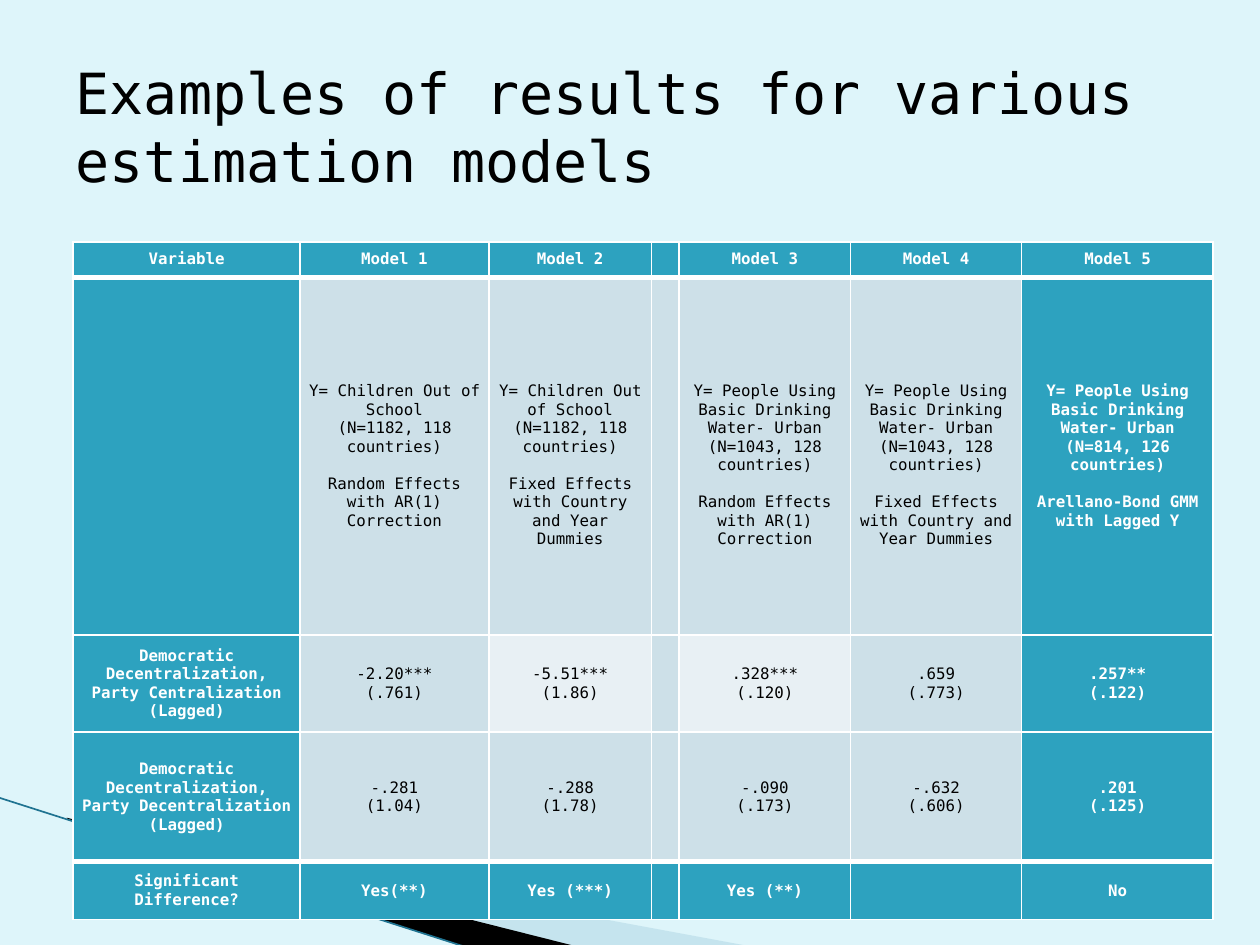
from dataclasses import dataclass
from typing import Optional

from lxml import etree
from pptx import Presentation
from pptx import util as u
from pptx.dml.color import RGBColor
from pptx.enum import shapes, text
from pptx.oxml import ns

WIDE, HIGH = u.Inches(10), u.Inches(7.5)


@dataclass(frozen=True)
class Theme:
    """Colours and type sizes of the slide."""
    back: str = "DEF5FA"
    teal: str = "2DA2BF"
    pale: str = "CDE0E8"
    light: str = "E8F0F4"
    mist: str = "A0CBDC"
    edge: str = "1F7391"
    ink: str = "000000"
    white: str = "FFFFFF"
    font: str = "DejaVu Sans Mono"
    head: float = 32.4
    body: float = 9
    gap: float = 10.5
    thin: float = 1
    thick: float = 3


@dataclass(frozen=True)
class Box:
    """A frame in percent of the slide's size."""
    left: float
    top: float
    width: float
    height: float

    def place(self) -> tuple:
        """Return the frame as lengths."""
        return (*spot(self.left, self.top), *spot(self.width, self.height))


@dataclass(frozen=True)
class Wedge:
    """A filled outline with corners in percent of the slide's size."""
    dots: tuple
    color: str
    alpha: Optional[int] = None


T = Theme()
TITLE = Box(5, 4, 90, 16.67)
GRID = Box(5.8, 25.6, 90.5, 71.73)
COLS = (180, 150, 129, 22, 136, 136, 152)
ROWS = (28, 284, 77, 103, 46)
WEDGES = (
    Wedge(((5.5, 86.8), (59.5, 100.13), (45.6, 100.13), (5.5, 86.67)), T.mist, 40),
    Wedge(((5.3, 86.53), (45.7, 100.13), (37.2, 100.27), (5.4, 86.67)), T.ink),
)
RULE = ((-0.1, 84.4), (37.1, 100.27))

SCHOOL = "Y= Children Out of School\n(N=1182, 118 countries)\n\n"
WATER = "Y= People Using Basic Drinking Water- Urban (N={} countries)\n\n"
RANDOM = "Random Effects with AR(1) Correction"
FIXED = "Fixed Effects with Country and Year Dummies"
DATA = (
    ("Variable", "Model 1", "Model 2", "", "Model 3", "Model 4", "Model 5"),
    ("", SCHOOL + RANDOM, SCHOOL + FIXED, "", WATER.format("1043, 128") + RANDOM,
     WATER.format("1043, 128") + FIXED,
     WATER.format("814, 126") + "Arellano-Bond GMM with Lagged Y"),
    ("Democratic Decentralization, Party Centralization (Lagged)", "-2.20***\n(.761)",
     "-5.51***\n(1.86)", "", ".328***\n(.120)", ".659\n(.773)", ".257**\n(.122)"),
    ("Democratic Decentralization, Party Decentralization (Lagged)", "-.281\n(1.04)",
     "-.288\n(1.78)", "", "-.090\n(.173)", "-.632\n(.606)", ".201\n(.125)"),
    ("Significant Difference?", "Yes(**)", "Yes (***)", "", "Yes (**)", "", "No"),
)
BRIGHT = {(2, 2), (2, 4)}
LOWER = {(1, 2), (1, 4), (1, 5)}


def spot(x: float, y: float) -> tuple:
    """Turn percent of the slide's size into lengths."""
    return u.Emu(round(WIDE * x / 100)), u.Emu(round(HIGH * y / 100))


def write(frame, copy: str, *, size: float, color: str, bold: bool = False,
          align=text.PP_ALIGN.LEFT, gap: float = 0) -> None:
    """Write lines as paragraphs, with a gap before each new block."""
    first = True
    for block in copy.split("\n\n"):
        for num, line in enumerate(block.split("\n")):
            par = frame.paragraphs[0] if first else frame.add_paragraph()
            par.alignment = align
            par.space_before = u.Pt(0 if first or num else gap)
            first = False
            if not line:
                etree.SubElement(par._p, ns.qn("a:endParaRPr"), sz=str(int(size * 100)))
                continue
            run = par.add_run()
            run.text = line
            font = run.font
            font.name, font.size, font.bold = T.font, u.Pt(size), bold
            font.color.rgb = RGBColor.from_string(color)


def border(cell, side: str, width: float) -> None:
    """Draw one white side of a cell."""
    line = etree.SubElement(cell._tc.get_or_add_tcPr(), ns.qn("a:ln" + side),
                            w=str(u.Pt(width)))
    fill = etree.SubElement(line, ns.qn("a:solidFill"))
    etree.SubElement(fill, ns.qn("a:srgbClr"), val=T.white)


def paint(shape, color: str, alpha: Optional[int] = None) -> None:
    """Fill a shape or cell with a colour."""
    shape.fill.solid()
    shape.fill.fore_color.rgb = RGBColor.from_string(color)
    if alpha is not None:
        tint = shape._element.spPr.find(".//" + ns.qn("a:srgbClr"))
        etree.SubElement(tint, ns.qn("a:alpha"), val=str(alpha * 1000))


def wedge(slide, item: Wedge) -> None:
    """Draw one corner wedge."""
    dots = [spot(*dot) for dot in item.dots]
    pen = slide.shapes.build_freeform(*dots[0])
    pen.add_line_segments(dots[1:], close=True)
    shape = pen.convert_to_shape()
    shape.shadow.inherit = False
    paint(shape, item.color, item.alpha)
    shape.line.fill.background()


def rule(slide) -> None:
    """Draw the thin line along the corner."""
    line = slide.shapes.add_connector(shapes.MSO_CONNECTOR.STRAIGHT,
                                      *spot(*RULE[0]), *spot(*RULE[1]))
    line.line.color.rgb = RGBColor.from_string(T.edge)
    line.line.width = u.Pt(0.95)
    etree.SubElement(line._element.spPr, ns.qn("a:effectLst"))


def title(slide) -> None:
    """Place and write the title."""
    head = slide.shapes.title
    head.left, head.top, head.width, head.height = TITLE.place()
    frame = head.text_frame
    frame.word_wrap, frame.auto_size = True, text.MSO_AUTO_SIZE.NONE
    frame.vertical_anchor = text.MSO_ANCHOR.MIDDLE
    frame.margin_top, frame.margin_bottom = u.Inches(0.15), 0
    write(frame, "Examples of results for various estimation models",
          size=T.head, color=T.ink)


def entry(cell, row: int, col: int) -> None:
    """Format and write one cell of the table."""
    last = len(ROWS) - 1
    strong = row in (0, last) or col in (0, len(COLS) - 1)
    cell.margin_left = cell.margin_right = u.Inches(0.07)
    cell.margin_top = u.Pt(T.gap if (row, col) in LOWER else 0)
    cell.margin_bottom = 0
    cell.vertical_anchor = text.MSO_ANCHOR.MIDDLE
    for side in "LRTB":
        heavy = (side == "B" and row in (0, last - 1)) or (side == "T" and row in (1, last))
        border(cell, side, T.thick if heavy else T.thin)
    paint(cell, T.teal if strong else T.light if (row, col) in BRIGHT else T.pale)
    write(cell.text_frame, DATA[row][col], size=T.body, bold=strong, gap=T.gap,
          color=T.white if strong else T.ink, align=text.PP_ALIGN.CENTER)


def table(slide) -> None:
    """Build the table of results."""
    spots = GRID.place()
    grid = slide.shapes.add_table(len(ROWS), len(COLS), *spots).table
    grid.first_row = grid.horz_banding = False
    for col, part in zip(grid.columns, COLS):
        col.width = round(spots[2] * part / sum(COLS))
    for row, part in zip(grid.rows, ROWS):
        row.height = round(spots[3] * part / sum(ROWS))
    for row in range(len(ROWS)):
        for col in range(len(COLS)):
            entry(grid.cell(row, col), row, col)


def main() -> None:
    """Build the slide and save it."""
    deck = Presentation()
    deck.slide_width, deck.slide_height = WIDE, HIGH
    slide = deck.slides.add_slide(deck.slide_layouts[5])
    paint(slide.background, T.back)
    for item in WEDGES:
        wedge(slide, item)
    rule(slide)
    table(slide)
    title(slide)
    deck.save("out.pptx")


if __name__ == "__main__":
    main()
